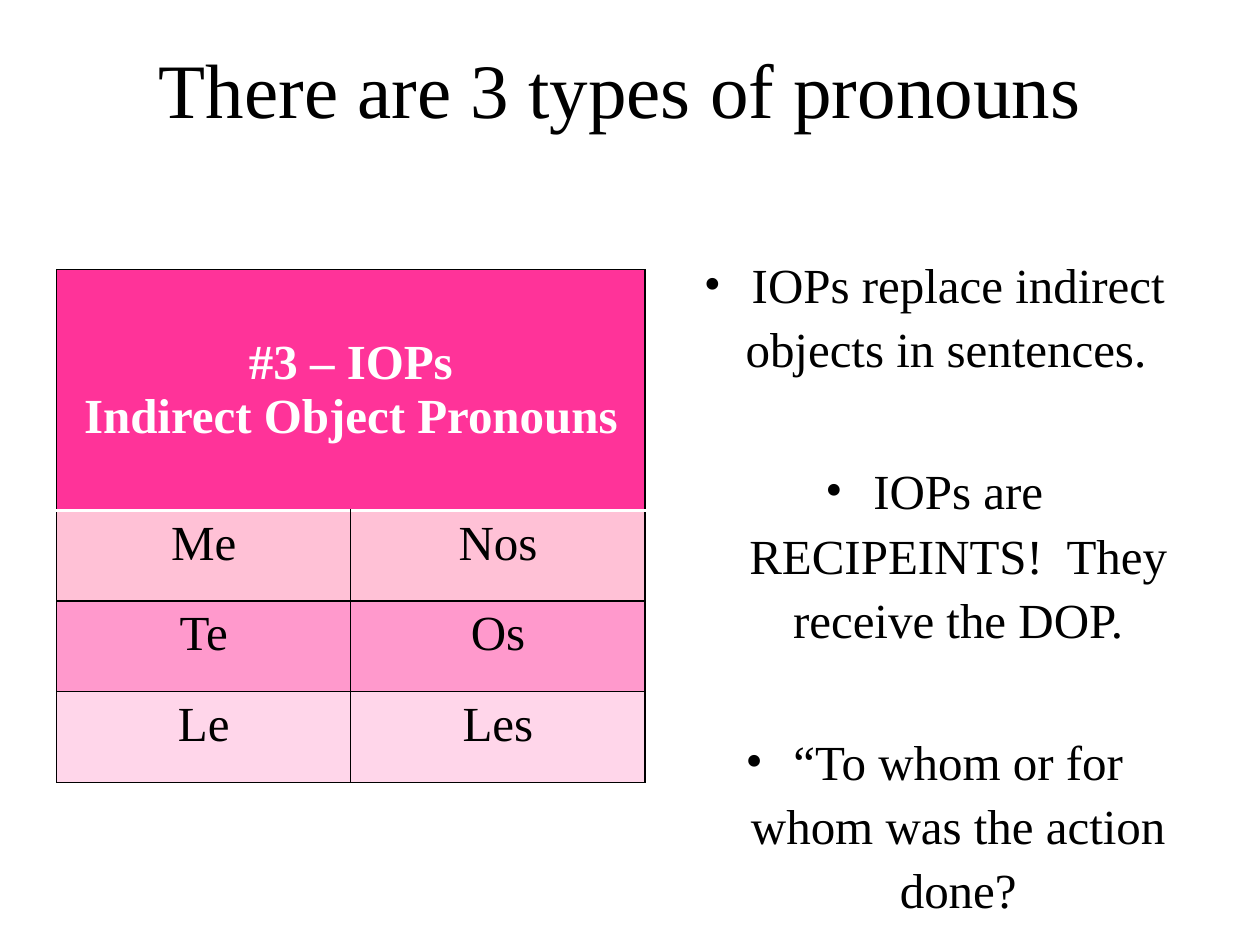
"""Build a slide on indirect object pronouns with a table and a bullet list."""
from lxml.etree import SubElement
from pptx import Presentation
from pptx.dml.color import RGBColor
from pptx.enum.text import MSO_ANCHOR, MSO_AUTO_SIZE, PP_ALIGN
from pptx.oxml import parse_xml
from pptx.oxml.ns import nsdecls, qn
from pptx.util import Inches, Pt

BLACK = RGBColor(0, 0, 0)
WHITE = RGBColor(255, 255, 255)
HOT_PINK = RGBColor(0xFF, 0x33, 0x99)
ROSE = RGBColor(0xFF, 0x66, 0x99)
PINK = RGBColor(0xFF, 0x99, 0xCC)
FONT = "Times New Roman"

TITLE = "There are 3 types of pronouns"
HEADING = ["#3 – IOPs", "Indirect Object Pronouns"]
PRONOUN_ROWS = [
    (("Me", "Nos"), ROSE, 40),
    (("Te", "Os"), PINK, 100),
    (("Le", "Les"), PINK, 40),
]
BULLETS = [
    "IOPs replace indirect objects in sentences.  ",
    "IOPs are RECIPEINTS!  They receive the DOP.",
    "“To whom or for whom was the action done?",
]


def write(frame, lines, size=28, color=BLACK, bold=False, anchor=MSO_ANCHOR.TOP):
    frame.vertical_anchor = anchor
    for index, line in enumerate(lines):
        para = frame.add_paragraph() if index else frame.paragraphs[0]
        para.alignment = PP_ALIGN.CENTER
        span = para.add_run()
        span.text = line
        span.font.name = FONT
        span.font.size = Pt(size)
        span.font.bold = bold
        span.font.color.rgb = color


def place(box, left, top, width, height):
    box.left, box.top = Inches(left), Inches(top)
    box.width, box.height = Inches(width), Inches(height)
    box.text_frame.word_wrap = True
    box.text_frame.auto_size = MSO_AUTO_SIZE.NONE


def paint(cell, color, opacity=100):
    cell.fill.solid()
    cell.fill.fore_color.rgb = color
    if opacity < 100:
        shade = cell._tc.tcPr.find(".//" + qn("a:srgbClr"))
        SubElement(shade, qn("a:alpha"), val=str(opacity * 1000))


def outline(cell, **special):
    properties = cell._tc.get_or_add_tcPr()
    for index, side in enumerate("LRTB"):
        color, points = special.get(side, (BLACK, 0.75))
        properties.insert(index, parse_xml(
            f'<a:ln{side} {nsdecls("a")} w="{Pt(points)}"><a:solidFill>'
            f'<a:srgbClr val="{color}"/></a:solidFill></a:ln{side}>'))


def add_pronoun_table(page):
    heights = [1.91] + [0.72] * len(PRONOUN_ROWS)
    table = page.shapes.add_table(
        len(heights), 2, Inches(0.45), Inches(2.14),
        Inches(4.67), Inches(sum(heights))).table
    for row, height in zip(table.rows, heights):
        row.height = Inches(height)

    divider = (WHITE, 2)
    heading = table.cell(0, 0)
    heading.merge(table.cell(0, 1))
    write(heading.text_frame, HEADING, color=WHITE, bold=True)
    heading.vertical_anchor = MSO_ANCHOR.MIDDLE
    for column in range(2):
        paint(table.cell(0, column), HOT_PINK)
        outline(table.cell(0, column), B=divider)

    for row, (words, color, opacity) in enumerate(PRONOUN_ROWS, 1):
        for column, word in enumerate(words):
            cell = table.cell(row, column)
            write(cell.text_frame, [word])
            paint(cell, color, opacity)
            outline(cell, **({"T": divider} if row == 1 else {}))


def add_bullets(body):
    place(body, 5.33, 1.93, 4.17, 4.5)
    write(body.text_frame, BULLETS)
    for index, para in enumerate(body.text_frame.paragraphs):
        para.line_spacing = 1.09
        para.space_before = Pt(44.6 if index else 0)
        properties = para._p.get_or_add_pPr()
        properties.set("marL", str(Inches(0.38)))
        properties.set("indent", str(Inches(-0.38)))
        SubElement(properties, qn("a:buFont"), typeface=FONT)
        SubElement(properties, qn("a:buChar"), char="•")


def main():
    deck = Presentation()
    deck.slide_width, deck.slide_height = Inches(10), Inches(7.5)
    page = deck.slides.add_slide(deck.slide_layouts[1])
    title, body = page.placeholders
    place(title, 0.67, 0.07, 8.5, 1.25)
    write(title.text_frame, [TITLE], size=44, anchor=MSO_ANCHOR.MIDDLE)
    add_pronoun_table(page)
    add_bullets(body)
    deck.save("out.pptx")


if __name__ == "__main__":
    main()
